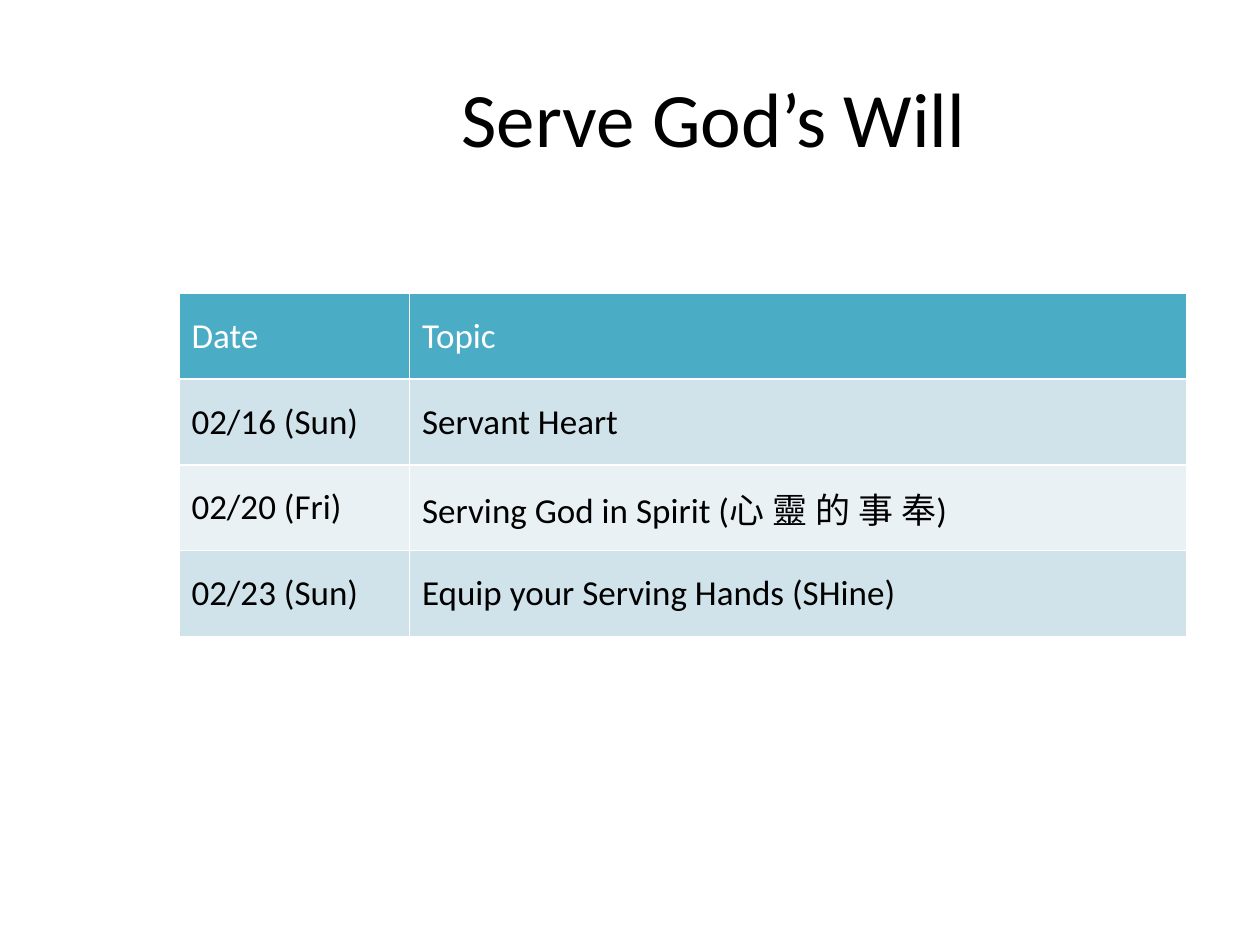
from pptx import Presentation
from pptx import util as u
from pptx.dml.color import RGBColor
from pptx.enum import text

BLACK = RGBColor(0x00, 0x00, 0x00)
WHITE = RGBColor(0xFF, 0xFF, 0xFF)
TEAL = RGBColor(0x4B, 0xAC, 0xC6)
BANDS = [RGBColor(0xE9, 0xF1, 0xF5), RGBColor(0xD0, 0xE3, 0xEA)]
FONT = "Calibri"

SCHEDULE = [
    ("Date", "Topic"),
    ("02/16 (Sun)", "Servant Heart"),
    ("02/20 (Fri)", "Serving God in Spirit (心 靈 的 事 奉)"),
    ("02/23 (Sun)", "Equip your Serving Hands (SHine)"),
]


def set_attrs(obj, values):
    for name, value in values.items():
        setattr(obj, name, value)


def write(tf, words, size, color, align):
    tf.vertical_anchor = text.MSO_ANCHOR.MIDDLE
    p = tf.paragraphs[0]
    p.alignment = align
    r = p.add_run()
    r.text = words
    set_attrs(r.font, {"name": FONT, "size": u.Pt(size), "bold": False})
    r.font.color.rgb = color


def add_title(s, left, top, width, height):
    sp = s.shapes.title
    set_attrs(sp, {"left": left, "top": top, "width": width, "height": height})
    write(sp.text_frame, "Serve God’s Will", 44, BLACK, text.PP_ALIGN.CENTER)


def add_schedule(s, left, top, width, height):
    tbl = s.shapes.add_table(len(SCHEDULE), 2, left, top, width, height).table
    date_width = u.Inches(1.83)
    tbl.columns[0].width = date_width
    tbl.columns[1].width = width - date_width
    for i, row in enumerate(SCHEDULE):
        for j, words in enumerate(row):
            cell = tbl.cell(i, j)
            cell.fill.solid()
            cell.fill.fore_color.rgb = BANDS[i % 2] if i else TEAL
            cell.vertical_anchor = text.MSO_ANCHOR.MIDDLE
            write(cell.text_frame, words, 20, BLACK if i else WHITE, text.PP_ALIGN.LEFT)


def main():
    prs = Presentation()
    set_attrs(prs, {"slide_width": u.Inches(10), "slide_height": u.Inches(7.5)})
    s = prs.slides.add_slide(prs.slide_layouts[5])
    add_title(s, u.Inches(1.58), u.Inches(0.3), u.Inches(8.17), u.Inches(1.25))
    add_schedule(s, u.Inches(1.42), u.Inches(2.33), u.Inches(8), u.Inches(2.72))
    prs.save("out.pptx")


if __name__ == "__main__":
    main()
